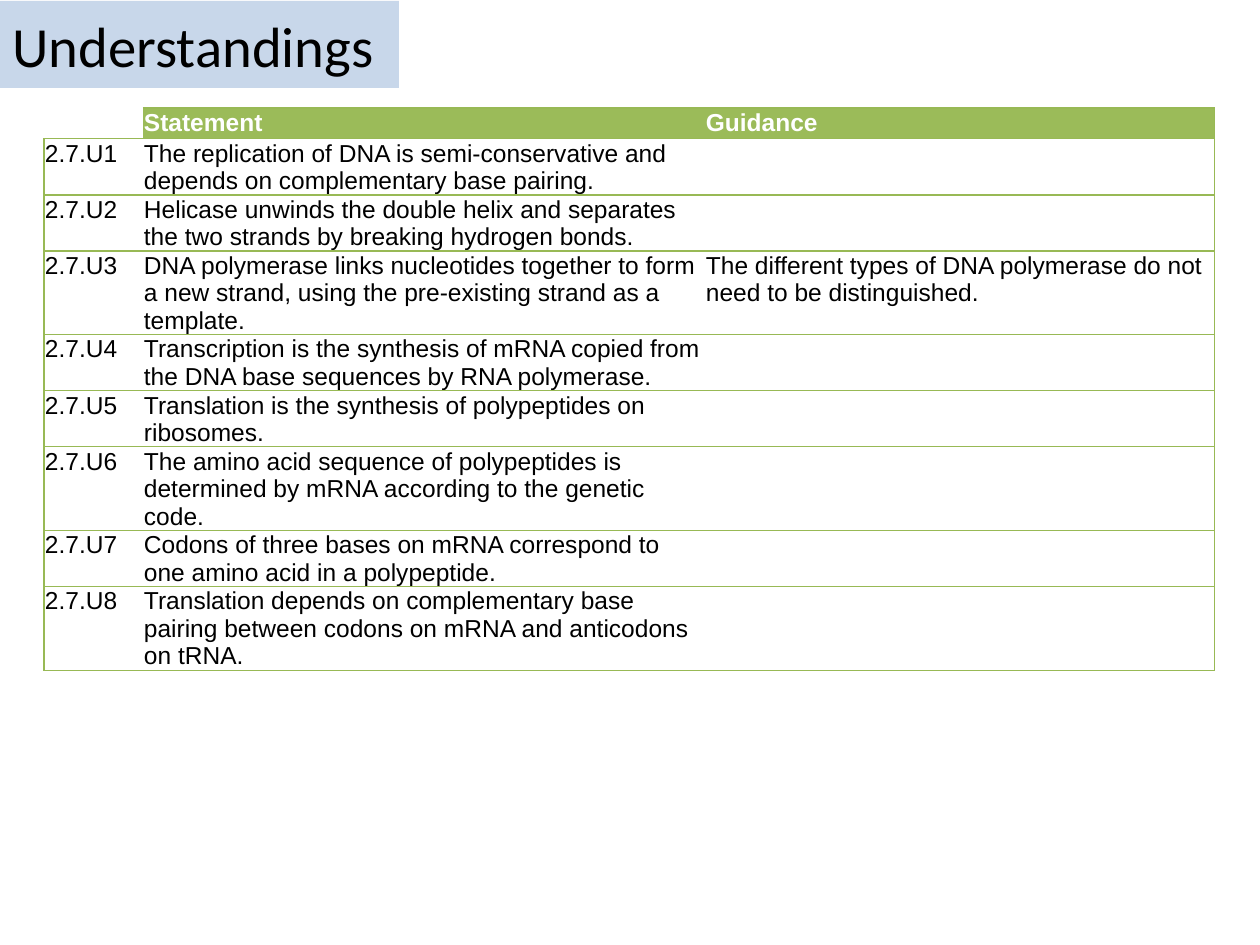
from lxml.etree import SubElement
from pptx import Presentation
from pptx.dml.color import RGBColor
from pptx.enum.shapes import MSO_SHAPE
from pptx.enum.text import MSO_ANCHOR, PP_ALIGN
from pptx.oxml.ns import qn
from pptx.util import Emu, Pt

# Content
TITLE = "Understandings"
HEADER = ("", "Statement", "Guidance")
CODE_PREFIX = "2.7.U"
UNDERSTANDINGS = [
    ("The replication of DNA is semi-conservative and depends on complementary base pairing.", ""),
    ("Helicase unwinds the double helix and separates the two strands by breaking hydrogen bonds.", ""),
    ("DNA polymerase links nucleotides together to form a new strand, using the pre-existing strand as a template.",
     "The different types of DNA polymerase do not need to be distinguished."),
    ("Transcription is the synthesis of mRNA copied from the DNA base sequences by RNA polymerase.", ""),
    ("Translation is the synthesis of polypeptides on ribosomes.", ""),
    ("The amino acid sequence of polypeptides is determined by mRNA according to the genetic code.", ""),
    ("Codons of three bases on mRNA correspond to one amino acid in a polypeptide.", ""),
    ("Translation depends on complementary base pairing between codons on mRNA and anticodons on tRNA.", ""),
]

# Layout in px, 126 to the inch
PX = 914400 // 126
SLIDE_SIZE = (1260, 945)
TITLE_BOX = (0, 1, 399, 87)
TABLE_LEFT, TABLE_TOP = 44, 108
COLUMN_WIDTHS = (99, 562, 510)
HEADER_HEIGHT, ROW_HEIGHT = 30, 32
CELL_MARGIN = 1
TABLE_TEXT_SIZE = Pt(14)
PLAIN_TABLE_STYLE = "{2D5ABB26-0587-4C30-8999-92F81FD0307C}"

WHITE = RGBColor(0xFF, 0xFF, 0xFF)
BLACK = RGBColor(0x00, 0x00, 0x00)
TITLE_BLUE = RGBColor(0xB9, 0xCD, 0xE5)
HEADER_GREEN = RGBColor(0x9B, 0xBB, 0x59)
BORDER_GREEN = RGBColor(0x98, 0xB9, 0x55)


def px(*lengths):
    return [Emu(length * PX) for length in lengths]


def add_text(paragraph, text, font_name, size, color, bold=False):
    run = paragraph.add_run()
    run.text = text
    run.font.name = font_name
    run.font.size = size
    run.font.bold = bold
    run.font.color.rgb = color


def add_title(slide):
    shape = slide.shapes.add_shape(MSO_SHAPE.RECTANGLE, *px(*TITLE_BOX))
    shape.shadow.inherit = False
    shape.line.fill.background()
    shape.fill.solid()
    shape.fill.fore_color.rgb = TITLE_BLUE
    color = shape.fill._xPr.find(".//" + qn("a:srgbClr"))
    SubElement(color, qn("a:alpha"), val="78000")
    frame = shape.text_frame
    frame.word_wrap = True
    frame.vertical_anchor = MSO_ANCHOR.MIDDLE
    frame.paragraphs[0].alignment = PP_ALIGN.LEFT
    add_text(frame.paragraphs[0], TITLE, "Calibri", Pt(32.4), BLACK)


def add_borders(cell, sides):
    properties = cell._tc.get_or_add_tcPr()
    for side in sides:
        line = SubElement(properties, qn("a:ln" + side), w=str(Pt(0.75)))
        fill = SubElement(line, qn("a:solidFill"))
        SubElement(fill, qn("a:srgbClr"), val=str(BORDER_GREEN))


def border_sides(row, column):
    """Horizontal rules everywhere, vertical rules at the outer edges only."""
    if row == 0 and column == 0:
        return ""
    left = "L" if column == 0 else ""
    right = "R" if column == len(HEADER) - 1 else ""
    return left + right + ("T" if row == 0 else "TB")


def fill_cell(cell, text, row, column):
    cell.margin_left = cell.margin_right = cell.margin_top = Emu(CELL_MARGIN * PX)
    cell.margin_bottom = 0
    add_borders(cell, border_sides(row, column))
    if row == 0 and column == 0:
        cell.fill.background()
    else:
        cell.fill.solid()
        cell.fill.fore_color.rgb = WHITE if row else HEADER_GREEN
    paragraph = cell.text_frame.paragraphs[0]
    if text:
        add_text(paragraph, text, "Arial", TABLE_TEXT_SIZE, BLACK if row else WHITE, bold=row == 0)
    else:
        # Keeps an empty cell from stretching its row
        SubElement(paragraph._p, qn("a:endParaRPr"), sz="1400")


def add_understandings_table(slide):
    rows = [HEADER] + [(f"{CODE_PREFIX}{number}", *texts)
                       for number, texts in enumerate(UNDERSTANDINGS, 1)]
    heights = [HEADER_HEIGHT] + [ROW_HEIGHT] * len(UNDERSTANDINGS)
    box = px(TABLE_LEFT, TABLE_TOP, sum(COLUMN_WIDTHS), sum(heights))
    table = slide.shapes.add_table(len(rows), len(HEADER), *box).table
    table._tbl.tblPr.find(qn("a:tableStyleId")).text = PLAIN_TABLE_STYLE
    table.horz_banding = False
    for column, width in zip(table.columns, px(*COLUMN_WIDTHS)):
        column.width = width
    for row, height in zip(table.rows, px(*heights)):
        row.height = height
    for row, texts in enumerate(rows):
        for column, text in enumerate(texts):
            fill_cell(table.cell(row, column), text, row, column)


def main():
    presentation = Presentation()
    presentation.slide_width, presentation.slide_height = px(*SLIDE_SIZE)
    slide = presentation.slides.add_slide(presentation.slide_layouts[6])
    add_title(slide)
    add_understandings_table(slide)
    presentation.save("out.pptx")


if __name__ == "__main__":
    main()
